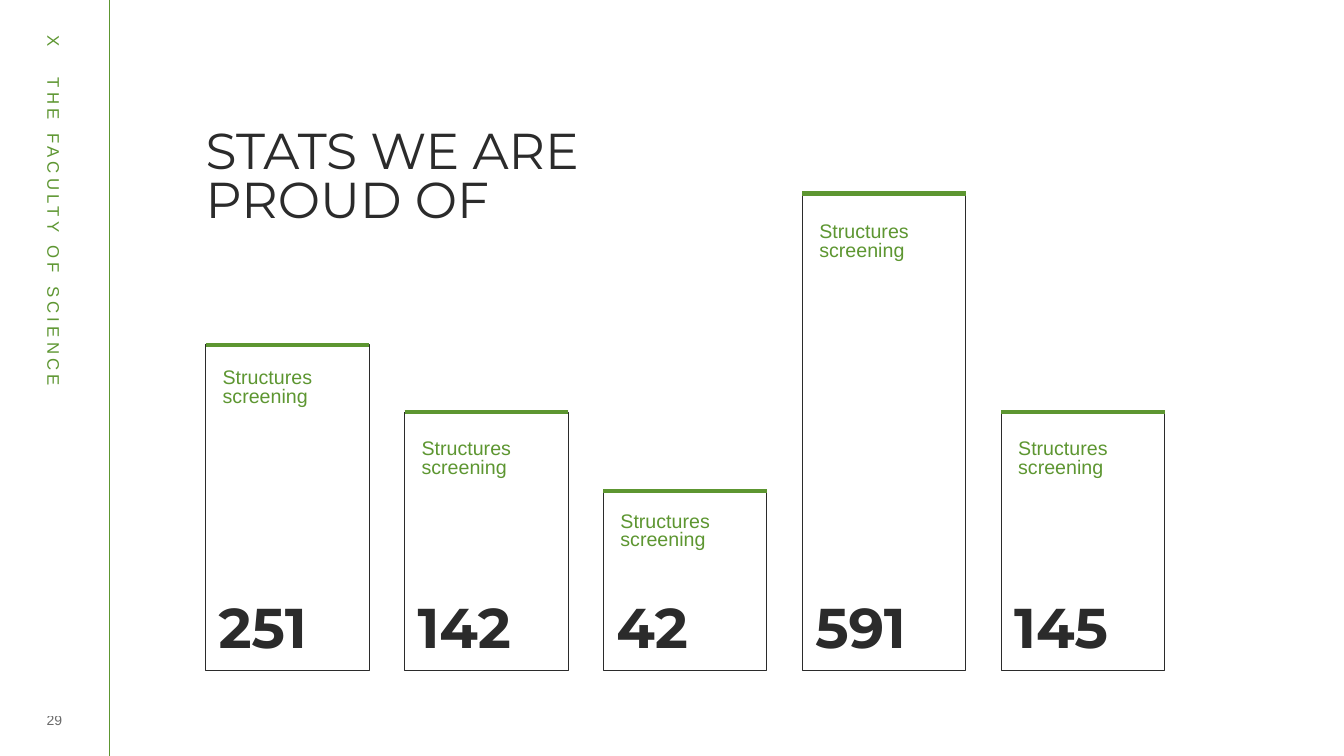
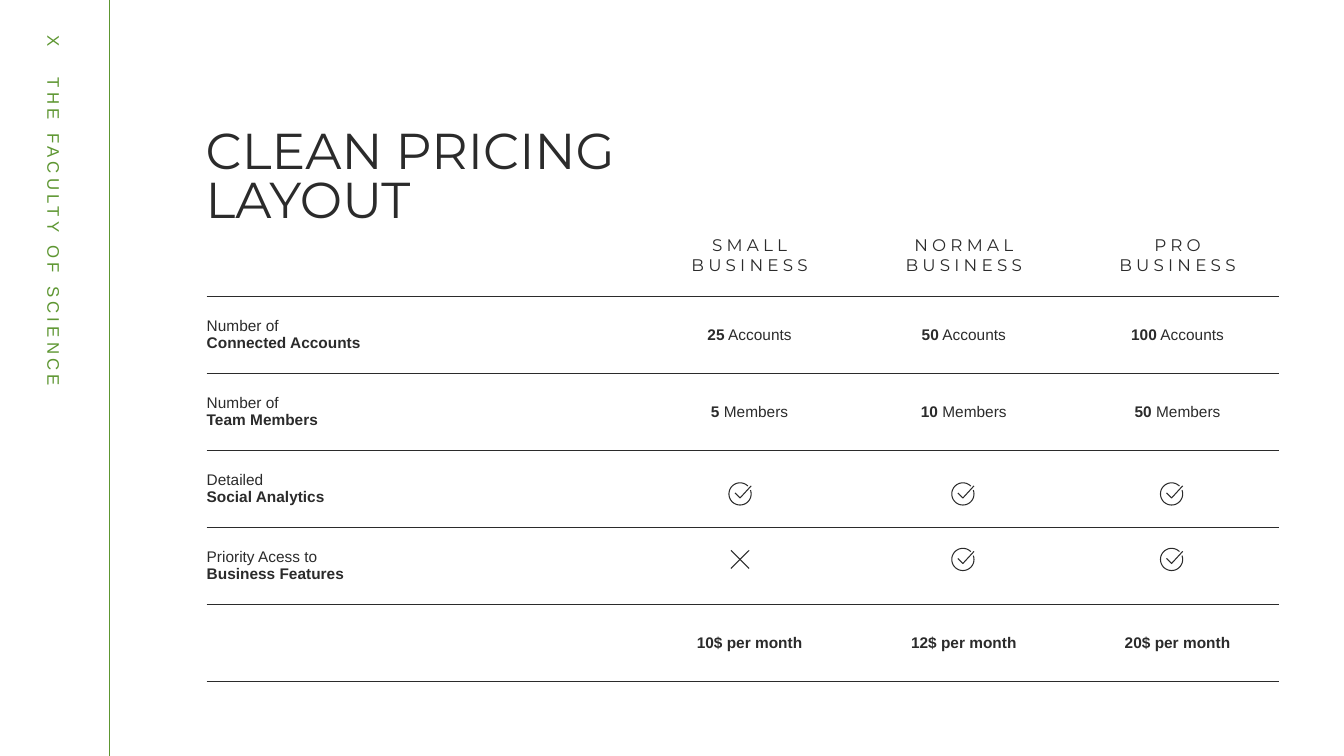
from math import cos, radians, sin

from lxml.etree import SubElement
from pptx import Presentation
from pptx.dml.color import RGBColor
from pptx.enum.shapes import MSO_CONNECTOR, MSO_SHAPE
from pptx.enum.text import MSO_ANCHOR, MSO_AUTO_SIZE, PP_ALIGN
from pptx.oxml import parse_xml
from pptx.oxml.ns import nsdecls, qn
from pptx.util import Inches, Pt

GREEN = RGBColor(0x5D, 0x96, 0x31)
DARK = RGBColor(0x2B, 0x2B, 0x2B)
BODY_FONT = "Arial"
DISPLAY_FONT = "Montserrat"
TIGHT = 0.8
CONTENT_LEFT = 2.04

ARC = [(0.11 * cos(radians(angle)), 0.11 * sin(radians(angle))) for angle in range(-20, 316, 5)]
CHECK = [ARC, [(-0.05, -0.01), (0, 0.04), (0.11, -0.08)]]
CROSS = [[(-0.09, -0.09), (0.09, 0.09)], [(-0.09, 0.09), (0.09, -0.09)]]


class Deck:
    """Holds the house style and the slide being drawn."""

    def __init__(self):
        self.presentation = Presentation()
        self.presentation.slide_width = Inches(13.33)
        self.presentation.slide_height = Inches(7.5)
        self.slide = None

    def add_slide(self, title):
        self.slide = self.presentation.slides.add_slide(self.presentation.slide_layouts[5])
        self.line(1.08, 0, 1.08, 7.5, GREEN, 0.5)
        self.side_label("X\tTHE FACULTY OF SCIENCE")
        shape = self.slide.shapes.title
        shape.left, shape.top = Inches(CONTENT_LEFT), Inches(1.09)
        shape.width, shape.height = Inches(4.62), Inches(1.77)
        frame = shape.text_frame
        self.set_frame(frame, (0, 0.21, 0, 0), MSO_ANCHOR.TOP)
        frame.text = title
        for paragraph in frame.paragraphs:
            self.set_paragraph(paragraph, 36, DARK, DISPLAY_FONT, spacing=TIGHT)

    def set_frame(self, frame, insets, anchor):
        frame.word_wrap = True
        frame.auto_size = MSO_AUTO_SIZE.NONE
        frame.vertical_anchor = anchor
        (frame.margin_left, frame.margin_top,
         frame.margin_right, frame.margin_bottom) = map(Inches, insets)

    def set_paragraph(self, paragraph, size, color, font=BODY_FONT, bold=False,
                      align=PP_ALIGN.LEFT, spacing=None, tracking=0):
        paragraph.alignment = align
        if spacing:
            paragraph.line_spacing = spacing
        for run in paragraph.runs:
            run.font.size = Pt(size)
            run.font.name = font
            run.font.bold = bold
            run.font.color.rgb = color
            if tracking:
                run._r.get_or_add_rPr().set("spc", str(tracking * 100))

    def text(self, left, top, width, height, text, size, color,
             insets=(0.1, 0.05, 0.1, 0.05), anchor=MSO_ANCHOR.TOP, **style):
        shape = self.slide.shapes.add_textbox(*map(Inches, (left, top, width, height)))
        self.set_frame(shape.text_frame, insets, anchor)
        shape.text_frame.text = text
        for paragraph in shape.text_frame.paragraphs:
            self.set_paragraph(paragraph, size, color, **style)
        return shape

    def side_label(self, text):
        shape = self.text(-2.3, 2.94, 5.67, 0.3, text, 12, GREEN, tracking=3)
        shape.rotation = 90
        properties = shape.text_frame.paragraphs[0]._p.get_or_add_pPr()
        tabs = SubElement(properties, qn("a:tabLst"))
        SubElement(tabs, qn("a:tab"), pos=str(Inches(0.42)), algn="l")

    def page_number(self, number):
        shape = self.text(0.26, 7.02, 0.56, 0.25, number, 10, DARK, insets=(0, 0, 0, 0),
                          anchor=MSO_ANCHOR.MIDDLE, align=PP_ALIGN.CENTER)
        for color in shape.text_frame._txBody.iter(qn("a:srgbClr")):
            SubElement(color, qn("a:alpha"), val="70000")

    def line(self, x1, y1, x2, y2, color, width):
        connector = self.slide.shapes.add_connector(
            MSO_CONNECTOR.STRAIGHT, *map(Inches, (x1, y1, x2, y2)))
        connector.line.color.rgb = color
        connector.line.width = Pt(width)
        SubElement(connector._element.spPr, qn("a:effectLst"))

    def outline(self, shape, width):
        shape.shadow.inherit = False
        shape.fill.background()
        shape.line.color.rgb = DARK
        shape.line.width = Pt(width)

    def stat_bar(self, left, top, label_top, label, value):
        width, bottom = 1.62, 6.65
        box = self.slide.shapes.add_shape(
            MSO_SHAPE.RECTANGLE, *map(Inches, (left, top, width, bottom - top)))
        self.outline(box, 0.5)
        self.line(left, top, left + width, top, GREEN, 3)
        self.text(left + 0.07, label_top, 1.55, 0.93, label, 14, GREEN, spacing=TIGHT)
        self.text(left + 0.03, 5.96, 1.59, 0.56, value, 40, DARK,
                  font=DISPLAY_FONT, bold=True, spacing=TIGHT)

    def icon(self, strokes, center_x, center_y):
        builder = None
        for stroke in strokes:
            start, *rest = [(Inches(center_x + x), Inches(center_y + y)) for x, y in stroke]
            if builder is None:
                builder = self.slide.shapes.build_freeform(*start)
            else:
                builder.move_to(*start)
            builder.add_line_segments(rest, close=False)
        self.outline(builder.convert_to_shape(), 0.75)

    def table(self, left, top, widths, heights):
        frame = self.slide.shapes.add_table(
            len(heights), len(widths),
            *map(Inches, (left, top, sum(widths), sum(heights))))
        table = frame.table
        table.first_row = table.horz_banding = False
        for column, width in zip(table.columns, widths):
            column.width = Inches(width)
        for row, height in zip(table.rows, heights):
            row.height = Inches(height)
        last = len(heights) - 1
        for index, row in enumerate(table.rows):
            for cell in row.cells:
                cell.fill.background()
                self.cell_borders(cell, 0.5 if index else 0, 1 if index == last else 0.5)
        return table

    def cell_borders(self, cell, top, bottom):
        properties = cell._tc.get_or_add_tcPr()
        sides = (("lnL", 0), ("lnR", 0), ("lnT", top), ("lnB", bottom))
        for position, (side, width) in enumerate(sides):
            paint = (f'<a:solidFill><a:srgbClr val="{DARK}"/></a:solidFill>'
                     if width else "<a:noFill/>")
            properties.insert(position, parse_xml(
                f'<a:{side} {nsdecls("a")} w="{Pt(width)}">{paint}</a:{side}>'))

    def cell(self, cell, lines, insets, anchor=MSO_ANCHOR.MIDDLE, size=11, **style):
        (cell.margin_left, cell.margin_top,
         cell.margin_right, cell.margin_bottom) = map(Inches, insets)
        cell.vertical_anchor = anchor
        cell.text_frame.text = "\n".join(line[0][0] for line in lines)
        for paragraph, line in zip(cell.text_frame.paragraphs, lines):
            for text, _ in line[1:]:
                paragraph.add_run().text = text
            self.set_paragraph(paragraph, size, DARK, **style)
            for run, (_, bold) in zip(paragraph.runs, line):
                run.font.bold = bold


def stats_slide(deck):
    deck.add_slide("STATS WE ARE\vPROUD OF")
    deck.page_number("29")
    bars = [("251", 3.42, 3.62), ("142", 4.09, 4.32), ("42", 4.87, 5.06 - 0.02),
            ("591", 1.92, 2.17), ("145", 4.09, 4.32)]
    pitch = (9.93 - CONTENT_LEFT) / (len(bars) - 1)
    for index, (value, top, label_top) in enumerate(bars):
        deck.stat_bar(CONTENT_LEFT + index * pitch, top, label_top,
                      "Structures\nscreening", value)


def pricing_slide(deck):
    deck.add_slide("CLEAN PRICING LAYOUT")
    row_height = (5.46 - 1.64) / 5
    table = deck.table(2.05, 1.3, [4.27, 2.13, 2.12, 2.12], [1.64] + [row_height] * 5)

    for column, plan in enumerate(("SMALL", "NORMAL", "PRO"), 1):
        deck.cell(table.cell(0, column), [[(plan, False)], [("BUSINESS", False)]],
                  (0.1, 0, 0, 0.2), MSO_ANCHOR.BOTTOM, 12, font=DISPLAY_FONT,
                  align=PP_ALIGN.CENTER, tracking=3)

    features = [("Number of", "Connected Accounts"), ("Number of", "Team Members"),
                ("Detailed", "Social Analytics"), ("Priority Acess to", "Business Features")]
    for row, (lead, name) in enumerate(features, 1):
        deck.cell(table.cell(row, 0), [[(lead, False)], [(name, True)]], (0, 0.05, 0.1, 0.05))

    amounts = {1: (("25", "50", "100"), " Accounts"),
               2: (("5", "10", "50"), " Members"),
               5: (("10$ per month", "12$ per month", "20$ per month"), "")}
    for row, (values, unit) in amounts.items():
        for column, value in enumerate(values, 1):
            line = [(value, True)] + ([(unit, False)] if unit else [])
            deck.cell(table.cell(row, column), [line], (0.1, 0.05, 0, 0.05),
                      align=PP_ALIGN.CENTER)

    icon_rows = [(4.9, (CHECK, CHECK, CHECK)), (5.55, (CROSS, CHECK, CHECK))]
    for center_y, icons in icon_rows:
        for center_x, strokes in zip((7.34, 9.55, 11.62), icons):
            deck.icon(strokes, center_x, center_y)


def main():
    deck = Deck()
    stats_slide(deck)
    pricing_slide(deck)
    deck.presentation.save("out.pptx")


if __name__ == "__main__":
    main()
